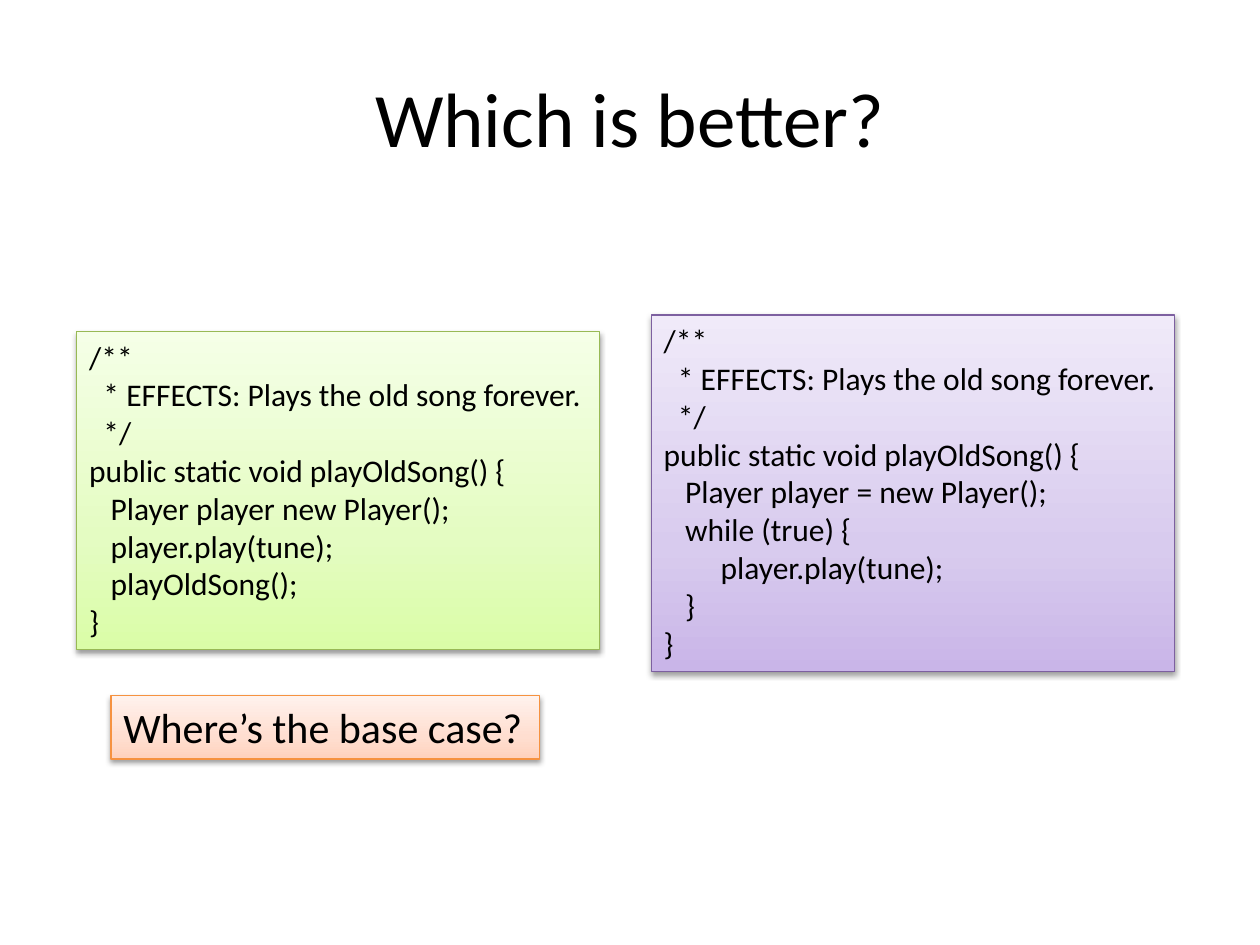
import copy

import pptx
import pptx.dml.color
import pptx.enum.shapes
import pptx.enum.text
import pptx.oxml
import pptx.oxml.ns
import pptx.util

Pt = pptx.util.Pt
RGB = pptx.dml.color.RGBColor
BLACK = RGB(0x00, 0x00, 0x00)
GREENS = [RGB(0xDA, 0xFD, 0xA7), RGB(0xE4, 0xFC, 0xC2), RGB(0xF5, 0xFF, 0xE7)]
GREEN_EDGE = RGB(0x98, 0xB9, 0x55)
PURPLES = [RGB(0xC9, 0xB5, 0xE8), RGB(0xD8, 0xCB, 0xEE), RGB(0xF0, 0xEA, 0xF9)]
PURPLE_EDGE = RGB(0x7D, 0x60, 0xA0)
ORANGES = [RGB(0xFF, 0xD2, 0xBD), RGB(0xFF, 0xDE, 0xD0), RGB(0xFF, 0xF2, 0xED)]
ORANGE_EDGE = RGB(0xF6, 0x92, 0x40)
SPACE_WIDTH = 4.07
SHADOW = (
    f'<a:outerShdw {pptx.oxml.ns.nsdecls("a")} blurRad="{Pt(3.1)}" dist="{Pt(1.6)}" '
    'dir="5400000" rotWithShape="0"><a:srgbClr val="000000"><a:alpha val="38000"/>'
    '</a:srgbClr></a:outerShdw>'
)


def write_text(frame, text, size=18, align=pptx.enum.text.PP_ALIGN.LEFT,
               anchor=pptx.enum.text.MSO_ANCHOR.TOP, wrap=False):
    frame.word_wrap = wrap
    frame.vertical_anchor = anchor
    for number, line in enumerate(text.split("\n")):
        paragraph = frame.add_paragraph() if number else frame.paragraphs[0]
        paragraph.alignment = align
        code = line.lstrip()
        indent = len(line) - len(code)
        if indent:
            paragraph._p.get_or_add_pPr().set("marL", str(Pt(indent * SPACE_WIDTH)))
        run = paragraph.add_run()
        run.text = code
        run.font.size = Pt(size)
        run.font.name = "Calibri"
        run.font.color.rgb = BLACK


deck = pptx.Presentation()
deck.slide_width, deck.slide_height = Pt(720), Pt(540)
slide = deck.slides.add_slide(deck.slide_layouts[5])

title = slide.shapes.title
title.left, title.top, title.width, title.height = Pt(36), Pt(21.6), Pt(648), Pt(90)
write_text(title.text_frame, "Which is better?", size=44, wrap=True,
           align=pptx.enum.text.PP_ALIGN.CENTER,
           anchor=pptx.enum.text.MSO_ANCHOR.MIDDLE)

opening = """/**
  * EFFECTS: Plays the old song forever.
  */
public static void playOldSong() {
"""
recursive_code = opening + """   Player player new Player();
   player.play(tune);
   playOldSong();
}"""
loop_code = opening + """   Player player = new Player();
   while (true) {
        player.play(tune);
   }
}"""

panels = [
    (recursive_code, 18, (43.9, 189.4, 298.8, 181.8), GREENS, GREEN_EDGE),
    (loop_code, 18, (372.2, 180, 298.8, 203.6), PURPLES, PURPLE_EDGE),
    ("Where’s the base case?", 24, (63.4, 397.4, 244.8, 36.3), ORANGES, ORANGE_EDGE),
]
for text, size, place, shades, edge in panels:
    panel = slide.shapes.add_shape(
        pptx.enum.shapes.MSO_SHAPE.RECTANGLE, *[Pt(length) for length in place])
    panel.fill.gradient()
    panel.fill.gradient_angle = 90
    stop_list = panel._element.spPr.find(".//" + pptx.oxml.ns.qn("a:gsLst"))
    stop_list.insert(1, copy.deepcopy(stop_list[0]))
    for stop, shade, position in zip(panel.fill.gradient_stops, shades, (0, 0.35, 1)):
        stop.color.rgb = shade
        stop.position = position
    panel.line.color.rgb = edge
    panel.line.width = Pt(0.75)
    panel.shadow.inherit = False
    effects = panel._element.spPr.find(pptx.oxml.ns.qn("a:effectLst"))
    effects.append(pptx.oxml.parse_xml(SHADOW))
    write_text(panel.text_frame, text, size=size)
    panel.text_frame.auto_size = pptx.enum.text.MSO_AUTO_SIZE.SHAPE_TO_FIT_TEXT

deck.save("out.pptx")
